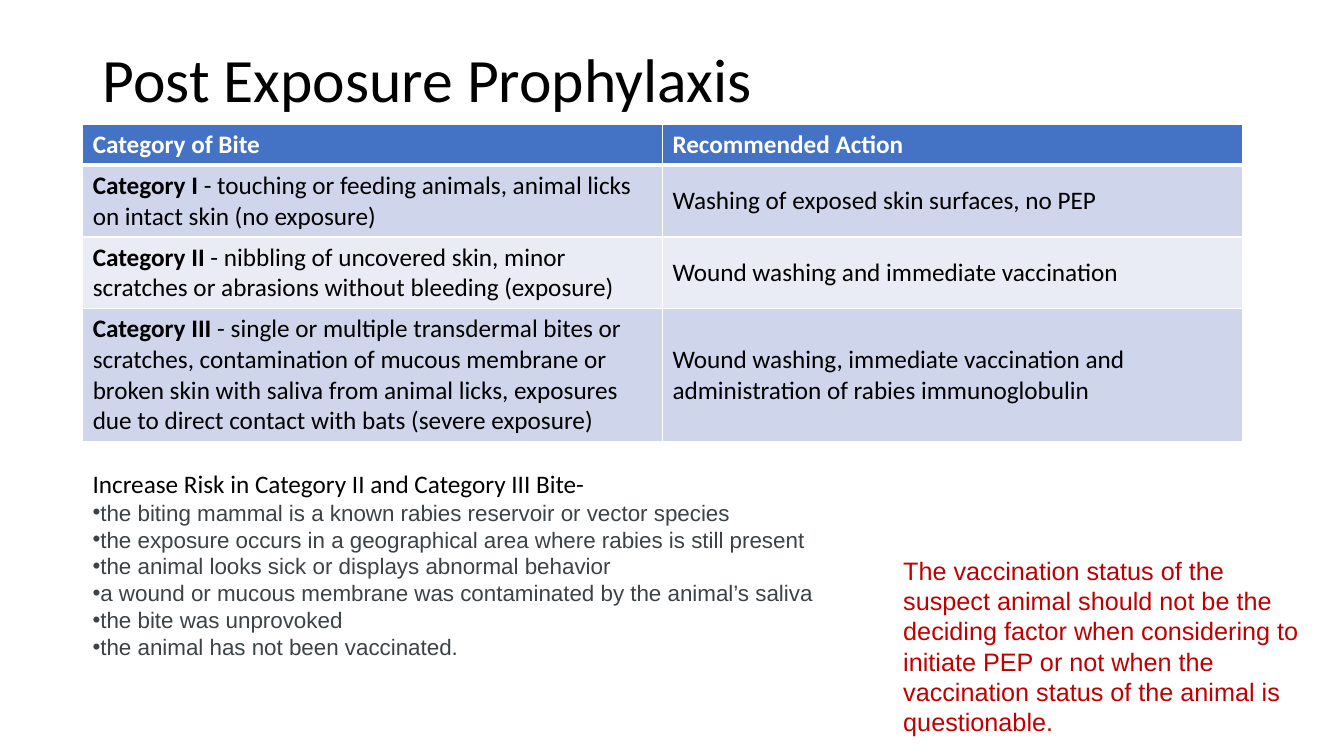
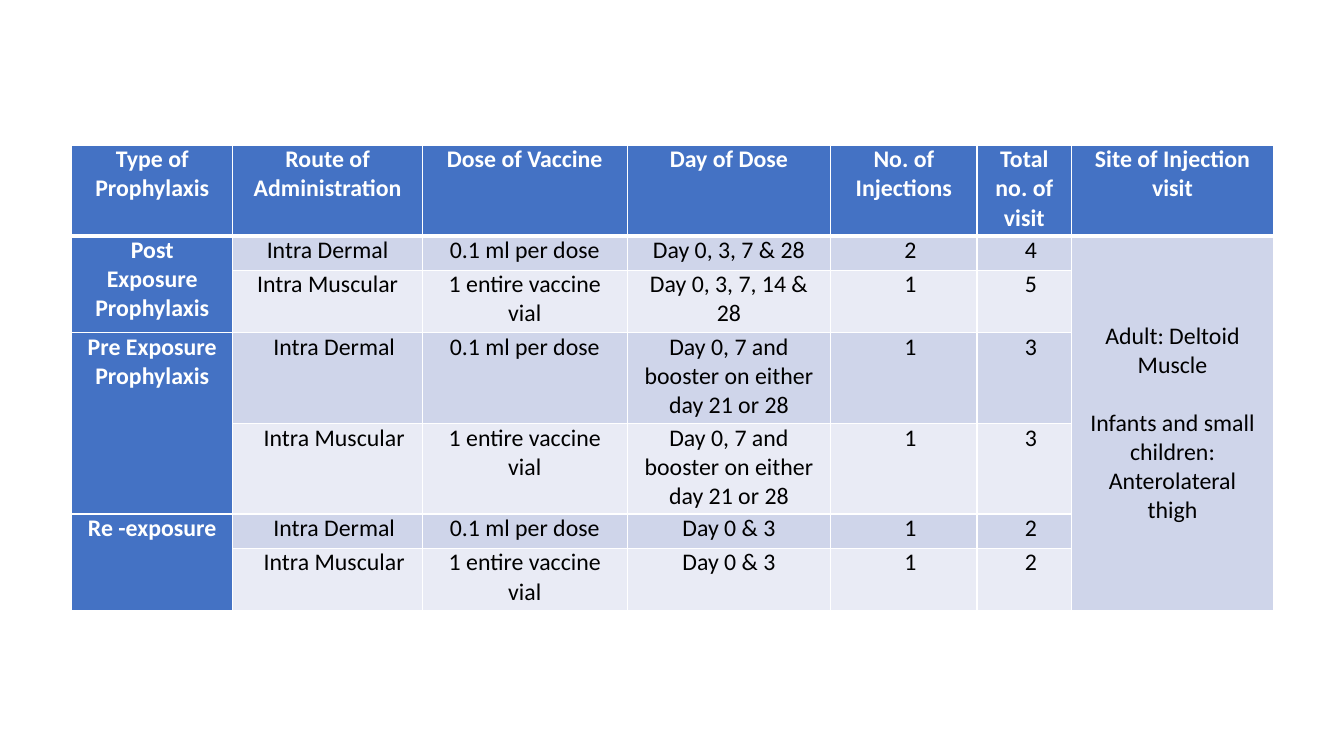
from lxml import etree
from pptx import Presentation
from pptx.dml.color import RGBColor
from pptx.enum.text import MSO_ANCHOR, MSO_AUTO_SIZE, PP_ALIGN
from pptx.oxml.ns import qn
from pptx.util import Inches, Pt

LEFT, CENTER = PP_ALIGN.LEFT, PP_ALIGN.CENTER
TOP, MIDDLE = MSO_ANCHOR.TOP, MSO_ANCHOR.MIDDLE
NO_AUTOFIT = MSO_AUTO_SIZE.NONE
TITLE_ONLY, BLANK = 5, 6

BLACK, WHITE, GRAY, RED = "000000", "FFFFFF", "3C4245", "C00000"
HEADER, BANDS = "4472C4", ("CFD5EA", "E9EBF5")
BODY_FONT, NOTE_FONT = "Calibri", "Arial"

BITE_ROWS = [
    ["Category of Bite", "Recommended Action"],
    [("Category I", " - touching or feeding animals, animal licks on intact skin (no exposure)"),
     "Washing of exposed skin surfaces, no PEP"],
    [("Category II", " - nibbling of uncovered skin, minor scratches or abrasions without bleeding (exposure)"),
     "Wound washing and immediate vaccination"],
    [("Category III", " - single or multiple transdermal bites or scratches, contamination of mucous membrane "
      "or broken skin with saliva from animal licks, exposures due to direct contact with bats (severe exposure)"),
     "Wound washing, immediate vaccination and administration of rabies immunoglobulin"],
]
RISKS = [
    "the biting mammal is a known rabies reservoir or vector species",
    "the exposure occurs in a geographical area where rabies is still present",
    "the animal looks sick or displays abnormal behavior",
    "a wound or mucous membrane was contaminated by the animal’s saliva",
    "the bite was unprovoked",
    "the animal has not been vaccinated.",
]
VACCINATION_NOTE = ("The vaccination status of the suspect animal should not be the deciding factor when "
                    "considering to initiate PEP or not when the vaccination status of the animal is questionable.")

DERMAL = ["Intra Dermal", "0.1 ml per dose"]
MUSCULAR = ["Intra Muscular", "1 entire vaccine vial"]
BOOSTER_DAYS = "Day 0, 7 and booster on either day 21 or 28"
SITES = "Adult: Deltoid Muscle\nInfants and small children: Anterolateral thigh"
DOSE_ROWS = [
    ["Type of Prophylaxis", "Route of Administration", "Dose of Vaccine", "Day of Dose",
     "No. of Injections", "Total no. of visit", "Site of Injection visit"],
    ["Post Exposure Prophylaxis", *DERMAL, "Day 0, 3, 7 & 28", "2", "4", SITES],
    ["", *MUSCULAR, "Day 0, 3, 7, 14 & 28", "1", "5", ""],
    ["Pre Exposure Prophylaxis", *DERMAL, BOOSTER_DAYS, "1", "3", ""],
    ["", *MUSCULAR, BOOSTER_DAYS, "1", "3", ""],
    ["Re -exposure", *DERMAL, "Day 0 & 3", "1", "2", ""],
    ["", *MUSCULAR, "Day 0 & 3", "1", "2", ""],
]
ROUTE, INJECTIONS, VISITS, SITE = 1, 4, 5, 6


def color(value):
    """Turn a hex string into a colour."""
    return RGBColor.from_string(value)


class Deck:
    """Hold the style and the current slide."""

    def __init__(self):
        self.presentation = Presentation()
        self.presentation.slide_width = Inches(13.33)
        self.presentation.slide_height = Inches(7.5)
        self.slide = None

    def add_slide(self, layout):
        """Start a slide on the given layout."""
        self.slide = self.presentation.slides.add_slide(self.presentation.slide_layouts[layout])

    def format(self, paragraph, size, ink=BLACK, font=BODY_FONT, bold=False, align=LEFT):
        """Style a paragraph and all of its runs."""
        paragraph.alignment = align
        for run in paragraph.runs:
            run.font.size = Pt(size)
            run.font.name = font
            run.font.bold = bold
            run.font.color.rgb = color(ink)

    def title(self, text, left, top, width, height):
        """Move and fill the title placeholder."""
        shape = self.slide.shapes.title
        shape.left, shape.top = Inches(left), Inches(top)
        shape.width, shape.height = Inches(width), Inches(height)
        frame = shape.text_frame
        frame.text = text
        frame.auto_size = NO_AUTOFIT
        frame.vertical_anchor = MIDDLE
        frame.paragraphs[0].line_spacing = 0.9
        self.format(frame.paragraphs[0], 44)

    def text_box(self, text, left, top, width, height, **style):
        """Add a wrapped text box and return its frame."""
        frame = self.slide.shapes.add_textbox(
            Inches(left), Inches(top), Inches(width), Inches(height)).text_frame
        frame.word_wrap = True
        frame.text = text
        self.format(frame.paragraphs[0], **style)
        return frame

    def bullets(self, frame, items, **style):
        """Append bulleted paragraphs to a frame."""
        for item in items:
            paragraph = frame.add_paragraph()
            paragraph.text = item
            self.format(paragraph, **style)
            properties = paragraph._p.get_or_add_pPr()
            etree.SubElement(properties, qn("a:buFont")).set("typeface", NOTE_FONT)
            etree.SubElement(properties, qn("a:buChar")).set("char", "•")

    def borders(self, cell, row):
        """Draw white cell borders, thick below the header row."""
        properties = cell._tc.get_or_add_tcPr()
        thick_side = {0: "B", 1: "T"}.get(row)
        for side in "LRTB":
            line = etree.SubElement(properties, qn(f"a:ln{side}"))
            line.set("w", str(Pt(3 if side == thick_side else 1)))
            fill = etree.SubElement(line, qn("a:solidFill"))
            etree.SubElement(fill, qn("a:srgbClr")).set("val", WHITE)

    def table(self, rows, left, top, widths, heights, size, align=LEFT, header_column=False):
        """Add a banded table; a tuple holds a bold lead and its text."""
        table = self.slide.shapes.add_table(
            len(rows), len(widths), Inches(left), Inches(top),
            Inches(sum(widths)), Inches(sum(heights))).table
        for column, width in zip(table.columns, widths):
            column.width = Inches(width)
        for row, height in zip(table.rows, heights):
            row.height = Inches(height)
        for row, values in enumerate(rows):
            for column, value in enumerate(values):
                cell = table.cell(row, column)
                heading = row == 0 or (header_column and column == 0)
                self.borders(cell, row)
                cell.fill.solid()
                cell.fill.fore_color.rgb = color(HEADER if heading else BANDS[(row - 1) % 2])
                lead, rest = value if isinstance(value, tuple) else (value, "")
                cell.text = lead
                first = cell.text_frame.paragraphs[0]
                if rest:
                    first.add_run().text = rest
                for paragraph in cell.text_frame.paragraphs:
                    self.format(paragraph, size, WHITE if heading else BLACK, bold=heading, align=align)
                if rest:
                    first.runs[0].font.bold = True
        return table


def bite_slide(deck):
    """Build the bite category slide."""
    deck.add_slide(TITLE_ONLY)
    deck.title("Post Exposure Prophylaxis", 0.92, 0.4, 11.5, 0.83)
    table = deck.table(BITE_ROWS, 0.82, 1.23, [5.75] * 2, [0.41, 0.7, 0.7, 1.3], 18)
    for row in range(1, len(BITE_ROWS)):
        for cell in table.rows[row].cells:
            cell.vertical_anchor = MIDDLE
    frame = deck.text_box("Increase Risk in Category II and Category III Bite-",
                          0.82, 4.6, 12.09, 2.32, size=18)
    deck.bullets(frame, RISKS, size=16, ink=GRAY, font=NOTE_FONT)
    deck.text_box(VACCINATION_NOTE, 8.86, 5.46, 4.12, 1.92, size=18, ink=RED, font=NOTE_FONT)


def dose_slide(deck):
    """Build the vaccine schedule slide."""
    deck.add_slide(BLANK)
    table = deck.table(DOSE_ROWS, 0.71, 1.44, [1.6, 1.88, 2.03, 2.02, 1.45, 0.94, 2],
                       [0.9, 0.34, 0.62, 0.9, 0.9, 0.34, 0.62], 17, CENTER, header_column=True)
    for row in range(len(DOSE_ROWS)):
        for column, cell in enumerate(table.rows[row].cells):
            cell.vertical_anchor = TOP
            cell.margin_left = cell.margin_right = Inches(0.12)
            cell.margin_top = cell.margin_bottom = 0
            indented = (row > 0 and column in (INJECTIONS, VISITS)) or (row > 2 and column == ROUTE)
            if indented:
                properties = cell.text_frame.paragraphs[0]._p.get_or_add_pPr()
                properties.set("marL", str(Inches(0.13)))
    for row in (1, 3, 5):
        table.cell(row, 0).merge(table.cell(row + 1, 0))
    sites = table.cell(1, SITE)
    sites.merge(table.cell(len(DOSE_ROWS) - 1, SITE))
    sites.vertical_anchor = MIDDLE
    sites.text_frame.paragraphs[1].space_before = Pt(21)


def main():
    """Build and save the presentation."""
    deck = Deck()
    bite_slide(deck)
    dose_slide(deck)
    deck.presentation.save("out.pptx")


if __name__ == "__main__":
    main()
